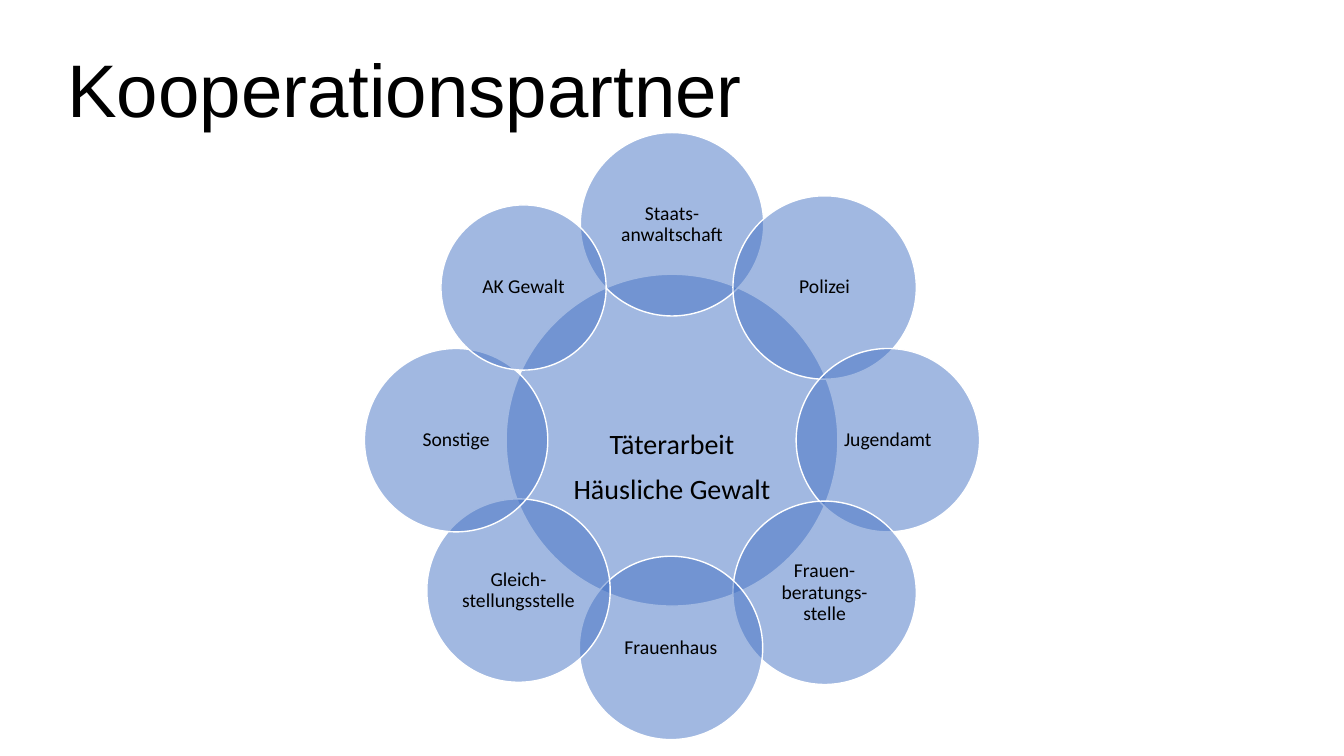
"""Build the slide of cooperation partners around the work with offenders."""
import math
from pptx import Presentation, util as u
from pptx.dml.color import RGBColor
from pptx.enum import shapes, text
from pptx.oxml import ns
from lxml import etree

TITLE = "Kooperationspartner"
TITLE_BOX = (48, 21.6, 864, 90)
CORE = ("Täterarbeit", " ", "Häusliche Gewalt")
PARTNERS = [
    ("Staats-anwaltschaft", 131, 0, 0),
    ("Polizei", 131, 0, 0),
    ("Jugendamt", 131, 0, 0),
    ("Frauen-beratungs-stelle", 131, 0, 0),
    ("Frauenhaus", 131, -0.7, -5.8),
    ("Gleich-stellungsstelle", 131, -0.6, -1.6),
    ("Sonstige", 131, 0, 0),
    ("AK Gewalt", 118, 3, 0),
]
CENTER_X, CENTER_Y = 480, 314.4
CORE_SIZE, RING_RADIUS = 237, 154.2
THEME = {
    "circle": RGBColor(0x44, 0x72, 0xC4), "alpha": 50000,
    "line": RGBColor(255, 255, 255), "text": RGBColor(0, 0, 0),
    "title_font": "Arial", "font": "Calibri",
    "title": 53.2, "core": 20, "gap": 66, "partner": 14,
}


def set_text(sp, runs, font, sizes, align, inset):
    tf = sp.text_frame
    tf.word_wrap = True
    tf.vertical_anchor = text.MSO_ANCHOR.MIDDLE
    tf.margin_left = tf.margin_right = tf.margin_top = tf.margin_bottom = u.Pt(inset)
    p = tf.paragraphs[0]
    p.alignment, p.line_spacing = align, 0.9
    p.font.name, p.font.color.rgb = font, THEME["text"]
    if len(runs) == 1:
        p.font.size = u.Pt(sizes[0])
    for words, size in zip(runs, sizes):
        r = p.add_run()
        r.text = words
        if len(runs) > 1:
            r.font.size = u.Pt(size)


def add_circle(s, x, y, size, runs, sizes, inset):
    sp = s.shapes.add_shape(shapes.MSO_SHAPE.OVAL, u.Pt(x - size / 2),
                            u.Pt(y - size / 2), u.Pt(size), u.Pt(size))
    sp.shadow.inherit = False
    sp.fill.solid()
    sp.fill.fore_color.rgb = THEME["circle"]
    color = sp._element.spPr.find(ns.qn("a:solidFill"))[0]
    etree.SubElement(color, ns.qn("a:alpha"), val=str(THEME["alpha"]))
    sp.line.color.rgb, sp.line.width = THEME["line"], u.Pt(1)
    set_text(sp, runs, THEME["font"], sizes, text.PP_ALIGN.CENTER, inset)


def main():
    prs = Presentation()
    prs.slide_width, prs.slide_height = u.Pt(960), u.Pt(540)
    s = prs.slides.add_slide(prs.slide_layouts[6])
    add_circle(s, CENTER_X, CENTER_Y, CORE_SIZE, CORE,
               (THEME["core"], THEME["gap"], THEME["core"]), 2)
    for i, (name, size, dx, dy) in enumerate(PARTNERS):
        angle = math.tau * i / len(PARTNERS)
        add_circle(s, CENTER_X + RING_RADIUS * math.sin(angle) + dx,
                   CENTER_Y - RING_RADIUS * math.cos(angle) + dy,
                   size, (name,), (THEME["partner"],), 1.4)
    title = s.shapes.add_textbox(*map(u.Pt, TITLE_BOX))
    set_text(title, (TITLE,), THEME["title_font"], (THEME["title"],),
             text.PP_ALIGN.LEFT, 0)
    prs.save("out.pptx")


if __name__ == "__main__":
    main()
